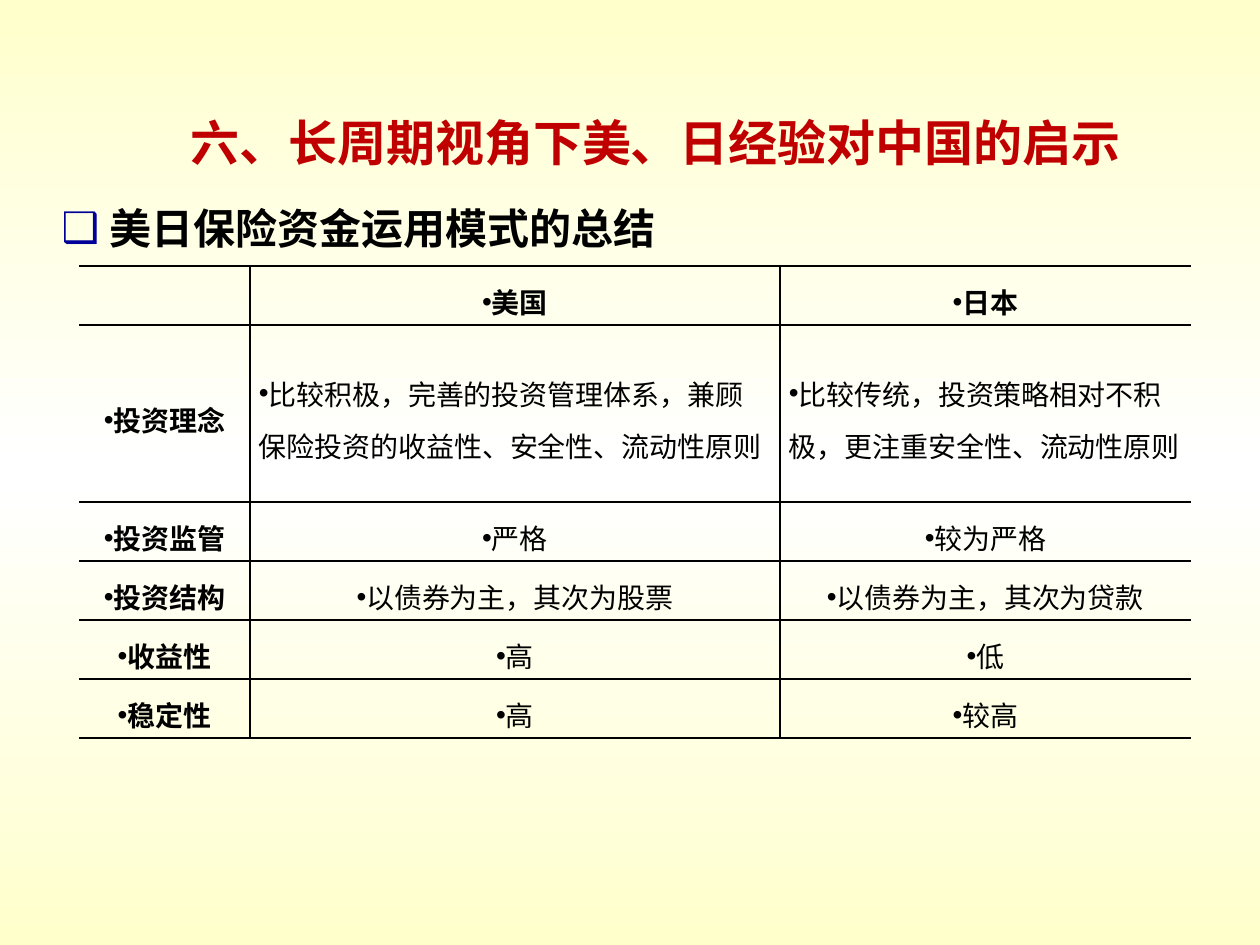
from copy import deepcopy
from dataclasses import dataclass

from lxml import etree
from pptx import Presentation
from pptx.dml.color import RGBColor
from pptx.enum.text import MSO_ANCHOR, MSO_AUTO_SIZE, PP_ALIGN
from pptx.oxml.ns import qn
from pptx.util import Pt

CENTER, LEFT = PP_ALIGN.CENTER, PP_ALIGN.LEFT
MIDDLE, TOP = MSO_ANCHOR.MIDDLE, MSO_ANCHOR.TOP
NO_FIT = MSO_AUTO_SIZE.NONE


@dataclass(frozen=True)
class Theme:
    cream: str = "FFFFCC"
    white: str = "FFFFFF"
    ink: str = "000000"
    red: str = "C00000"
    bullet: str = "000099"
    heading_font: str = "Arial"
    table_font: str = "Times New Roman"
    title_size: int = 28
    body_size: int = 24
    table_size: int = 16
    rule: int = 1


theme = Theme()
EMU_PER_PX = 914400 / 126


def px(*lengths):
    return [round(length * EMU_PER_PX) for length in lengths]


def write(paragraph, text, font, size, color, bold, align, spacing=1.0, bullet=None, hang=0):
    paragraph.alignment = align
    paragraph.line_spacing = spacing
    paragraph.space_before = Pt(0)
    properties = paragraph._p.get_or_add_pPr()
    if bullet:
        mark, mark_color = bullet
        indent = px(hang)[0]
        properties.set("marL", str(indent))
        properties.set("indent", str(-indent))
        tint = etree.SubElement(properties, qn("a:buClr"))
        etree.SubElement(tint, qn("a:srgbClr"), val=mark_color)
        etree.SubElement(properties, qn("a:buFont"), typeface=theme.heading_font)
        etree.SubElement(properties, qn("a:buChar"), char=mark)
    run = paragraph.add_run()
    run.text = text
    run.font.name = font
    run.font.size = Pt(size)
    run.font.bold = bold
    run.font.color.rgb = RGBColor.from_string(color)


deck = Presentation()
deck.slide_width, deck.slide_height = px(1260, 945)
slide = deck.slides.add_slide(deck.slide_layouts[1])

backdrop = slide.background.fill
backdrop.gradient()
backdrop.gradient_angle = 90
stop_list = slide._element.find(".//" + qn("a:gsLst"))
stop_list.insert(1, deepcopy(stop_list[0]))
for stop, position, color in zip(
    backdrop.gradient_stops, (0, 0.5, 1), (theme.cream, theme.white, theme.cream)
):
    stop.position = position
    stop.color.rgb = RGBColor.from_string(color)

title = slide.shapes.title
title.left, title.top, title.width, title.height = px(100, 106, 1111, 72)
title.text_frame.auto_size = NO_FIT
title.text_frame.vertical_anchor = MIDDLE
write(title.text_frame.paragraphs[0], "六、长周期视角下美、日经验对中国的启示",
      theme.heading_font, theme.title_size, theme.red, True, CENTER)

summary = slide.placeholders[1]
summary.left, summary.top, summary.width, summary.height = px(49, 186, 955, 69)
summary.text_frame.auto_size = NO_FIT
summary.text_frame.vertical_anchor = TOP
write(summary.text_frame.paragraphs[0], "美日保险资金运用模式的总结",
      theme.heading_font, theme.body_size, theme.ink, True, LEFT,
      1.2, ("❑", theme.bullet), 48)

comparison = [
    ("", "美国", "日本"),
    ("投资理念", "比较积极，完善的投资管理体系，兼顾保险投资的收益性、安全性、流动性原则",
     "比较传统，投资策略相对不积极，更注重安全性、流动性原则"),
    ("投资监管", "严格", "较为严格"),
    ("投资结构", "以债券为主，其次为股票", "以债券为主，其次为贷款"),
    ("收益性", "高", "低"),
    ("稳定性", "高", "较高"),
]
column_widths = px(171, 530, 411)
row_heights = px(59, 177, 59, 59, 59, 59)
table = slide.shapes.add_table(
    len(row_heights), len(column_widths), *px(79, 266),
    sum(column_widths), sum(row_heights),
).table
table.first_row = False
table.horz_banding = False
for column, width in zip(table.columns, column_widths):
    column.width = width
for row, height in zip(table.rows, row_heights):
    row.height = height

side_margin = px(9)[0]
last_column = len(column_widths) - 1
for r, entries in enumerate(comparison):
    for c, entry in enumerate(entries):
        cell = table.cell(r, c)
        cell.fill.background()
        cell.vertical_anchor = MIDDLE
        cell.margin_left = cell.margin_right = side_margin
        cell.margin_top = cell.margin_bottom = 0
        cell_properties = cell._tc.get_or_add_tcPr()
        ruled = {"lnL": c > 0, "lnR": c < last_column, "lnT": True, "lnB": True}
        for order, (side, visible) in enumerate(ruled.items()):
            border = etree.Element(qn("a:" + side), w=str(Pt(theme.rule)))
            if visible:
                paint = etree.SubElement(border, qn("a:solidFill"))
                etree.SubElement(paint, qn("a:srgbClr"), val=theme.ink)
            else:
                etree.SubElement(border, qn("a:noFill"))
            cell_properties.insert(order, border)
        if entry:
            is_header = r == 0 or c == 0
            align = LEFT if r == 1 and c > 0 else CENTER
            write(cell.text_frame.paragraphs[0], entry, theme.table_font,
                  theme.table_size, theme.ink, is_header, align,
                  1.3, ("•", theme.ink))

deck.save("out.pptx")
